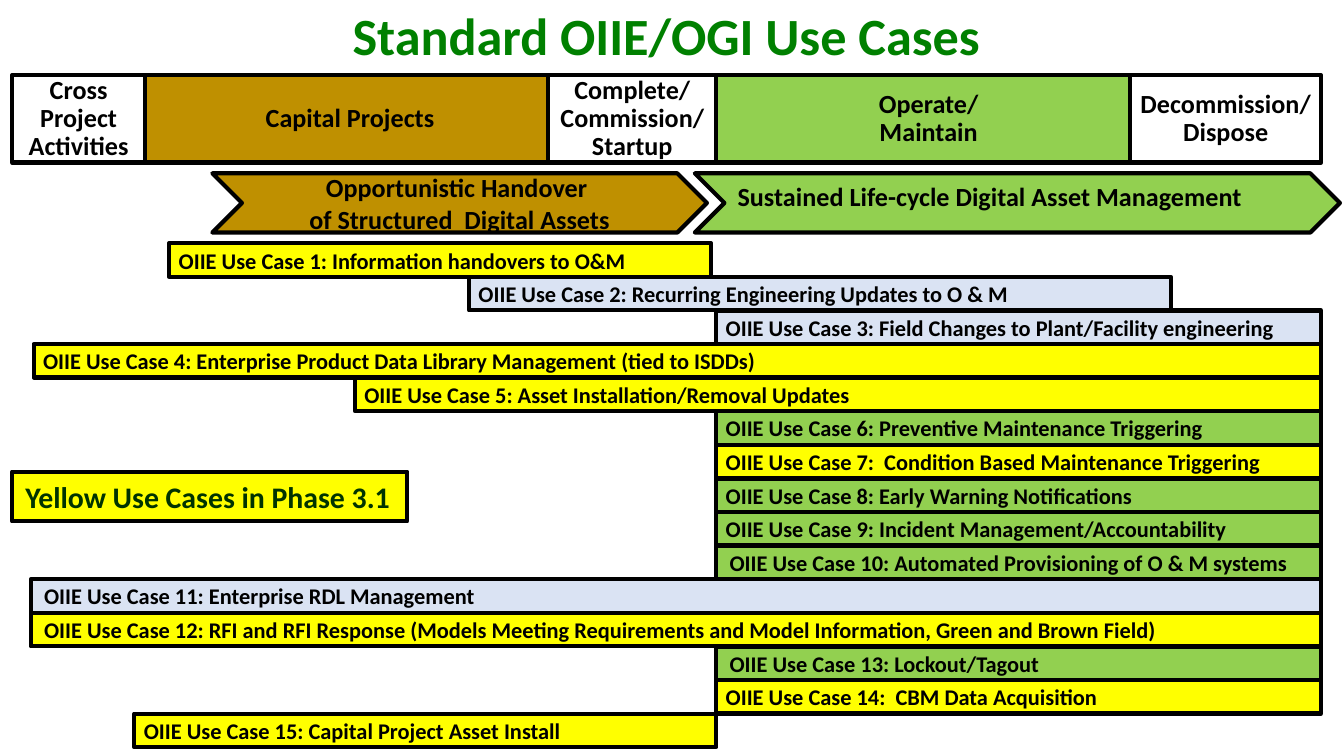
from dataclasses import dataclass

from pptx import Presentation
from pptx.dml.color import RGBColor
from pptx.enum.shapes import MSO_SHAPE
from pptx.enum.text import MSO_ANCHOR, MSO_AUTO_SIZE, PP_ALIGN
from pptx.util import Inches, Pt

RECT, CHEVRON = MSO_SHAPE.RECTANGLE, MSO_SHAPE.CHEVRON
TOP, MIDDLE = MSO_ANCHOR.TOP, MSO_ANCHOR.MIDDLE
LEFT, CENTER = PP_ALIGN.LEFT, PP_ALIGN.CENTER
NO_FIT = MSO_AUTO_SIZE.NONE

BLACK = RGBColor(0x00, 0x00, 0x00)
WHITE = RGBColor(0xFF, 0xFF, 0xFF)
BROWN = RGBColor(0xBF, 0x90, 0x00)
LIME = RGBColor(0x92, 0xD0, 0x50)
YELLOW = RGBColor(0xFF, 0xFF, 0x00)
BLUE = RGBColor(0xDA, 0xE3, 0xF3)
GREEN = RGBColor(0x00, 0x80, 0x00)
DARK = RGBColor(0x00, 0x33, 0x00)

# Grid in inches: shared column edges, and one row for each use case
WIDTH = 10
HEIGHT = WIDTH * 9 / 16
START, CAPITAL, COMMISSION, OPERATE, DISPOSE, END = 0.09, 1.08, 4.08, 5.33, 8.41, 9.83
STAGE_TOP, STAGE_HIGH = 0.56, 0.65
ARROW_TOP, ARROW_HIGH = 1.29, 0.44
ROW_TOP, ROW = 1.81, 0.25


@dataclass
class Style:
    size: int
    align: PP_ALIGN = LEFT
    anchor: MSO_ANCHOR = MIDDLE
    side: float = 0.1
    edge: float = 0.05
    color: RGBColor = BLACK
    spacing: float = 1.0


@dataclass
class Block:
    left: float
    right: float
    fill: RGBColor
    text: str
    side: float = 0.07


STAGE = Style(14, CENTER, side=0.01, edge=0.04, spacing=0.9)
HANDOVER = Style(14, CENTER, side=0.01)
SUSTAIN = Style(14, anchor=TOP)
NOTE = Style(16, anchor=TOP, color=DARK)
TITLE = Style(28, CENTER, side=0.07, edge=0.03, color=GREEN)

# Neighbours on the right cover the ends of the two wide stages
STAGES = [
    Block(CAPITAL, 4.13, BROWN, "Capital Projects"),
    Block(COMMISSION, OPERATE, WHITE, "Complete/\nCommission/\nStartup"),
    Block(OPERATE, 8.49, LIME, "Operate/\nMaintain"),
    Block(DISPOSE, END, WHITE, "Decommission/\nDispose"),
    Block(START, CAPITAL, WHITE, "Cross Project Activities"),
]
CASES = [
    Block(1.26, 5.29, YELLOW, "Information handovers to O&M"),
    Block(3.49, 8.71, BLUE, "Recurring Engineering Updates to O & M"),
    Block(OPERATE, END, BLUE, "Field Changes to Plant/Facility engineering"),
    Block(0.25, END, YELLOW, "Enterprise Product Data Library Management (tied to ISDDs)"),
    Block(2.64, END, YELLOW, "Asset Installation/Removal Updates"),
    Block(OPERATE, END, LIME, "Preventive Maintenance Triggering"),
    Block(OPERATE, END, YELLOW, " Condition Based Maintenance Triggering"),
    Block(OPERATE, END, LIME, "Early Warning Notifications"),
    Block(OPERATE, END, LIME, "Incident Management/Accountability"),
    Block(OPERATE, END, LIME, "Automated Provisioning of O & M systems", 0.1),
    Block(0.23, END, BLUE, "Enterprise RDL Management", 0.1),
    Block(0.23, END, YELLOW, "RFI and RFI Response (Models Meeting Requirements "
          "and Model Information, Green and Brown Field)", 0.1),
    Block(OPERATE, END, LIME, "Lockout/Tagout", 0.1),
    Block(OPERATE, END, YELLOW, " CBM Data Acquisition"),
    Block(1, OPERATE, YELLOW, "Capital Project Asset Install"),
]


def assign(target, values: dict) -> None:
    for name, value in values.items():
        setattr(target, name, value)


def write(shape, text: str, style: Style) -> None:
    side, edge = Inches(style.side), Inches(style.edge)
    frame = shape.text_frame
    assign(frame, dict(word_wrap=True, auto_size=NO_FIT, vertical_anchor=style.anchor,
                       margin_left=side, margin_right=side,
                       margin_top=edge, margin_bottom=edge))
    para = frame.paragraphs[0]
    assign(para, dict(text=text, alignment=style.align, line_spacing=style.spacing))
    for run in para.runs:
        assign(run.font, dict(name="Calibri", size=Pt(style.size), bold=True))
        run.font.color.rgb = style.color


def draw(slide, block: Block, top: float, high: float, style: Style, kind=RECT) -> None:
    shape = slide.shapes.add_shape(kind, Inches(block.left), Inches(top),
                                   Inches(block.right - block.left), Inches(high))
    shape.shadow.inherit = False
    shape.fill.solid()
    shape.fill.fore_color.rgb = block.fill
    shape.line.color.rgb = BLACK
    shape.line.width = Pt(2.25)
    write(shape, block.text, style)


def main() -> None:
    deck = Presentation()
    assign(deck, dict(slide_width=Inches(WIDTH), slide_height=Inches(HEIGHT)))
    slide = deck.slides.add_slide(deck.slide_layouts[5])

    # Title
    title = slide.shapes.title
    assign(title, dict(left=0, top=Inches(-0.03), width=Inches(WIDTH), height=Inches(0.58)))
    write(title, "Standard OIIE/OGI Use Cases ", TITLE)

    # Life-cycle stages
    for stage in STAGES:
        draw(slide, stage, STAGE_TOP, STAGE_HIGH, STAGE)

    # Arrows under the stages
    sustain = Block(5.17, 9.97, LIME, "Sustained Life-cycle Digital Asset Management")
    handover = Block(1.58, 5.26, BROWN,
                     "Opportunistic Handover \nof Structured  Digital Assets")
    for arrow, style in ((sustain, SUSTAIN), (handover, HANDOVER)):
        draw(slide, arrow, ARROW_TOP, ARROW_HIGH, style, CHEVRON)

    # Use cases, one row each
    for row, case in enumerate(CASES):
        label = f"OIIE Use Case {row + 1}: {case.text}"
        bar = Block(case.left, case.right, case.fill, label)
        edge = 0.04 if case.side < 0.1 else 0.05
        draw(slide, bar, ROW_TOP + row * ROW, ROW, Style(12, side=case.side, edge=edge))

    # Colour note
    draw(slide, Block(START, 3.03, YELLOW, "Yellow Use Cases in Phase 3.1"), 3.51, 0.37, NOTE)

    deck.save("out.pptx")


if __name__ == "__main__":
    main()
